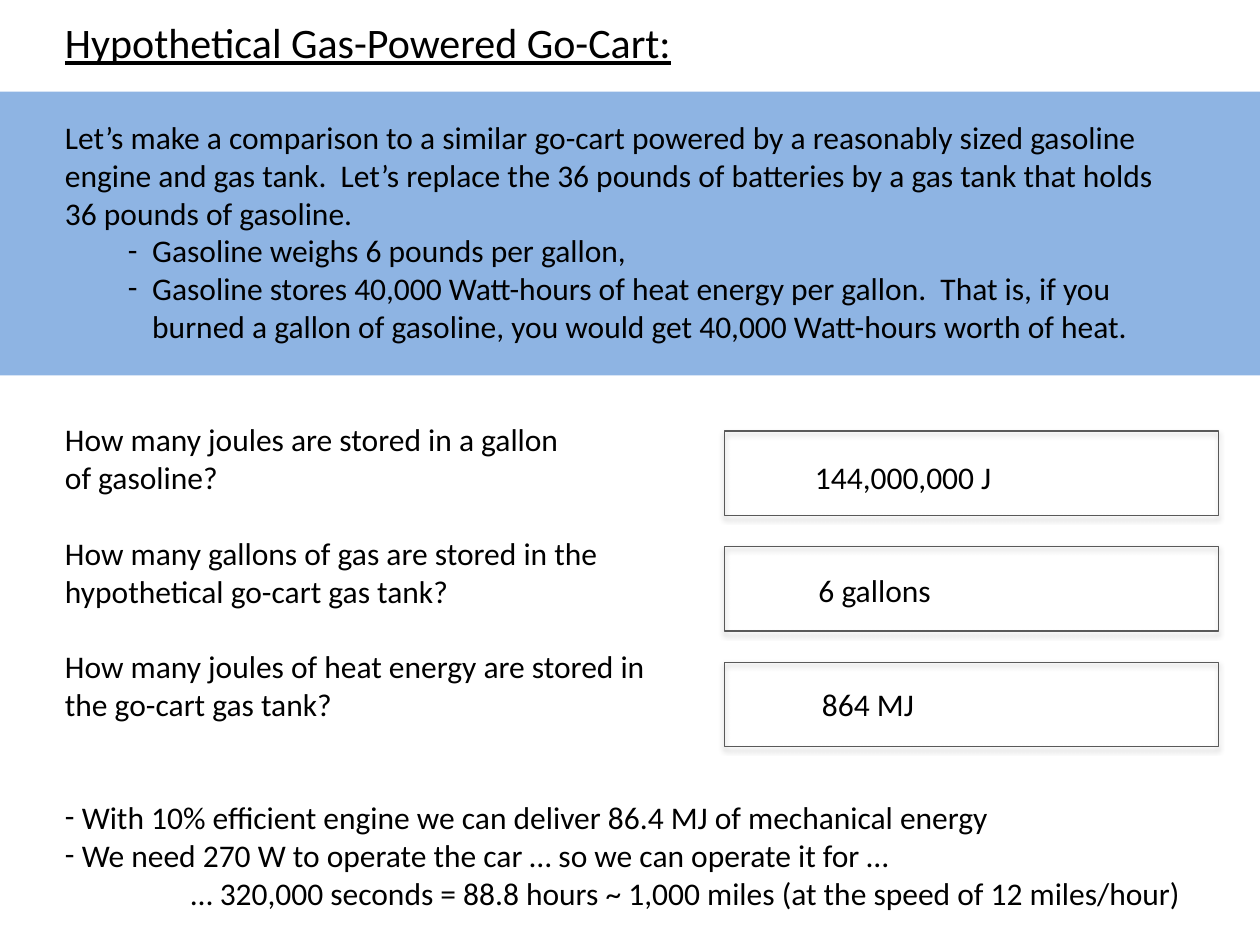
from lxml.etree import SubElement
from pptx import Presentation
from pptx.dml.color import RGBColor
from pptx.enum.shapes import MSO_SHAPE as Shape
from pptx.enum.text import MSO_ANCHOR as Anchor, MSO_AUTO_SIZE as AutoSize, PP_ALIGN as Align
from pptx.oxml.ns import qn
from pptx.util import Cm, Pt

COLORS = {"band": "8EB4E3", "text": "000000", "border": "595959", "shadow": "000000"}
FONT = "Calibri"
LEFT = 1.31
LINE_HEIGHT = 0.76

INTRO = (
    "Let’s make a comparison to a similar go-cart powered by a reasonably sized gasoline "
    "engine and gas tank.  Let’s replace the 36 pounds of batteries by a gas tank that holds "
    "36 pounds of gasoline."
)
FACTS = [
    "Gasoline weighs 6 pounds per gallon,",
    "Gasoline stores 40,000 Watt-hours of heat energy per gallon.  That is, if you "
    "burned a gallon of gasoline, you would get 40,000 Watt-hours worth of heat.",
]
QUESTIONS = [
    ("How many joules are stored in a gallon\vof gasoline?", "144,000,000 J"),
    ("How many gallons of gas are stored in the\vhypothetical go-cart gas tank?", "6 gallons"),
    ("How many joules of heat energy are stored in\vthe go-cart gas tank?", "864 MJ"),
]
CONCLUSIONS = [
    "With 10% efficient engine we can deliver 86.4 MJ of mechanical energy",
    "We need 270 W to operate the car … so we can operate it for …",
]
RESULT = "… 320,000 seconds = 88.8 hours ~ 1,000 miles (at the speed of 12 miles/hour)"


def rgb(name):
    return RGBColor.from_string(COLORS[name])


def write(frame, text, size=18, underline=False, indent=0, hanging=0, first=False):
    """Add a left-aligned paragraph; a hanging indent gives it a dash bullet."""
    paragraph = frame.paragraphs[0] if first else frame.add_paragraph()
    paragraph.text = text
    paragraph.alignment = Align.LEFT
    for run in paragraph.runs:
        run.font.name = FONT
        run.font.size = Pt(size)
        run.font.underline = underline
        run.font.color.rgb = rgb("text")
    properties = paragraph._p.get_or_add_pPr()
    properties.set("marL", str(Cm(indent)))
    properties.set("indent", str(Cm(-hanging)))
    if hanging:
        SubElement(properties, qn("a:buFont"), typeface=FONT)
        SubElement(properties, qn("a:buChar"), char="-")


def set_up_frame(shape, left=0, top=0, right=0):
    frame = shape.text_frame
    frame.word_wrap = True
    frame.auto_size = AutoSize.NONE
    frame.vertical_anchor = Anchor.TOP
    frame.margin_left, frame.margin_top = Cm(left), Cm(top)
    frame.margin_right, frame.margin_bottom = Cm(right), 0
    return frame


def add_text_box(slide, left, top, width, height):
    return set_up_frame(slide.shapes.add_textbox(Cm(left), Cm(top), Cm(width), Cm(height)))


def add_rectangle(slide, left, top, width, height):
    shape = slide.shapes.add_shape(Shape.RECTANGLE, Cm(left), Cm(top), Cm(width), Cm(height))
    shape.shadow.inherit = False
    return shape


def add_soft_shadow(shape):
    effects = shape._element.spPr.find(qn("a:effectLst"))
    shadow = SubElement(effects, qn("a:outerShdw"), blurRad=str(Pt(3.1)), dist=str(Pt(1.8)),
                        dir="5400000", rotWithShape="0")
    color = SubElement(shadow, qn("a:srgbClr"), val=COLORS["shadow"])
    SubElement(color, qn("a:alpha"), val="35000")


def set_title(slide, text):
    title = slide.shapes.title
    title.left, title.top, title.width, title.height = Cm(LEFT), Cm(0.33), Cm(22.8), Cm(1.1)
    write(set_up_frame(title), text, size=24, underline=True, first=True)


def add_intro_band(slide):
    band = add_rectangle(slide, 0, 1.85, 25.4, 5.72)
    band.fill.solid()
    band.fill.fore_color.rgb = rgb("band")
    band.line.fill.background()
    frame = set_up_frame(band, left=LEFT, top=0.53, right=1.5)
    write(frame, INTRO, first=True)
    for fact in FACTS:
        write(frame, fact, indent=1.76, hanging=0.49)


def add_answer_box(slide, row):
    box = add_rectangle(slide, 14.6, 8.69 + 2.33 * row, 9.96, 1.7)
    box.fill.background()
    box.line.color.rgb = rgb("border")
    box.line.width = Pt(0.75)
    add_soft_shadow(box)


def add_question(slide, row, question, answer):
    """Write a question, with its answer level with the second line."""
    top = 8.47 + 2.29 * row
    write(add_text_box(slide, LEFT, top, 12.6, 2 * LINE_HEIGHT), question, first=True)
    add_answer_box(slide, row)
    frame = add_text_box(slide, 16.43 + 0.07 * row, top + LINE_HEIGHT, 7.5, LINE_HEIGHT)
    write(frame, answer, first=True)


def add_conclusions(slide):
    frame = add_text_box(slide, LEFT, 16.09, 23.4, 3 * LINE_HEIGHT)
    for index, conclusion in enumerate(CONCLUSIONS):
        write(frame, conclusion, indent=0.34, hanging=0.34, first=index == 0)
    write(frame, RESULT, indent=2.54)


def main():
    presentation = Presentation()
    presentation.slide_width, presentation.slide_height = Cm(25.4), Cm(19.05)
    slide = presentation.slides.add_slide(presentation.slide_layouts[5])
    set_title(slide, "Hypothetical Gas-Powered Go-Cart:")
    add_intro_band(slide)
    for row, (question, answer) in enumerate(QUESTIONS):
        add_question(slide, row, question, answer)
    add_conclusions(slide)
    presentation.save("out.pptx")


if __name__ == "__main__":
    main()
